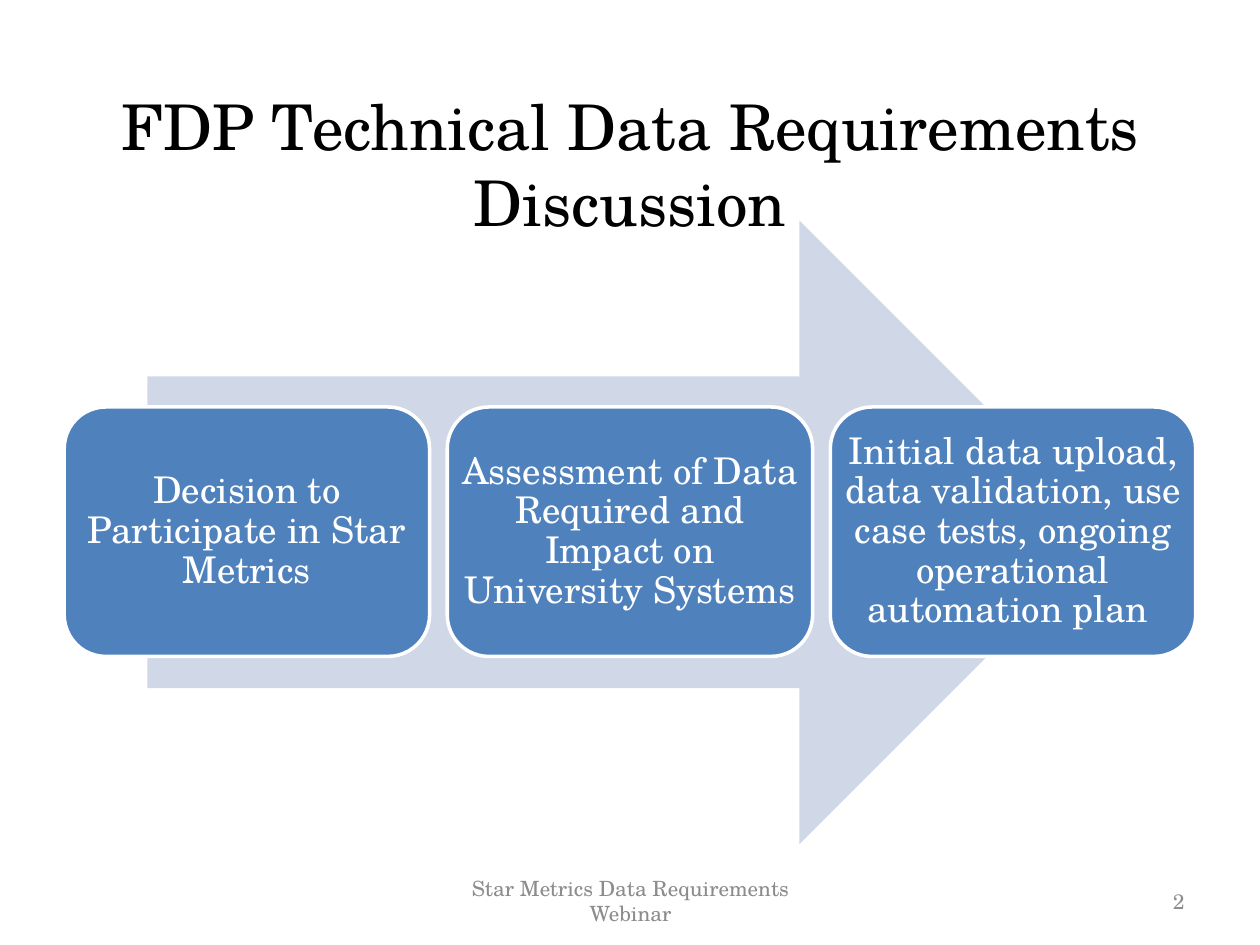
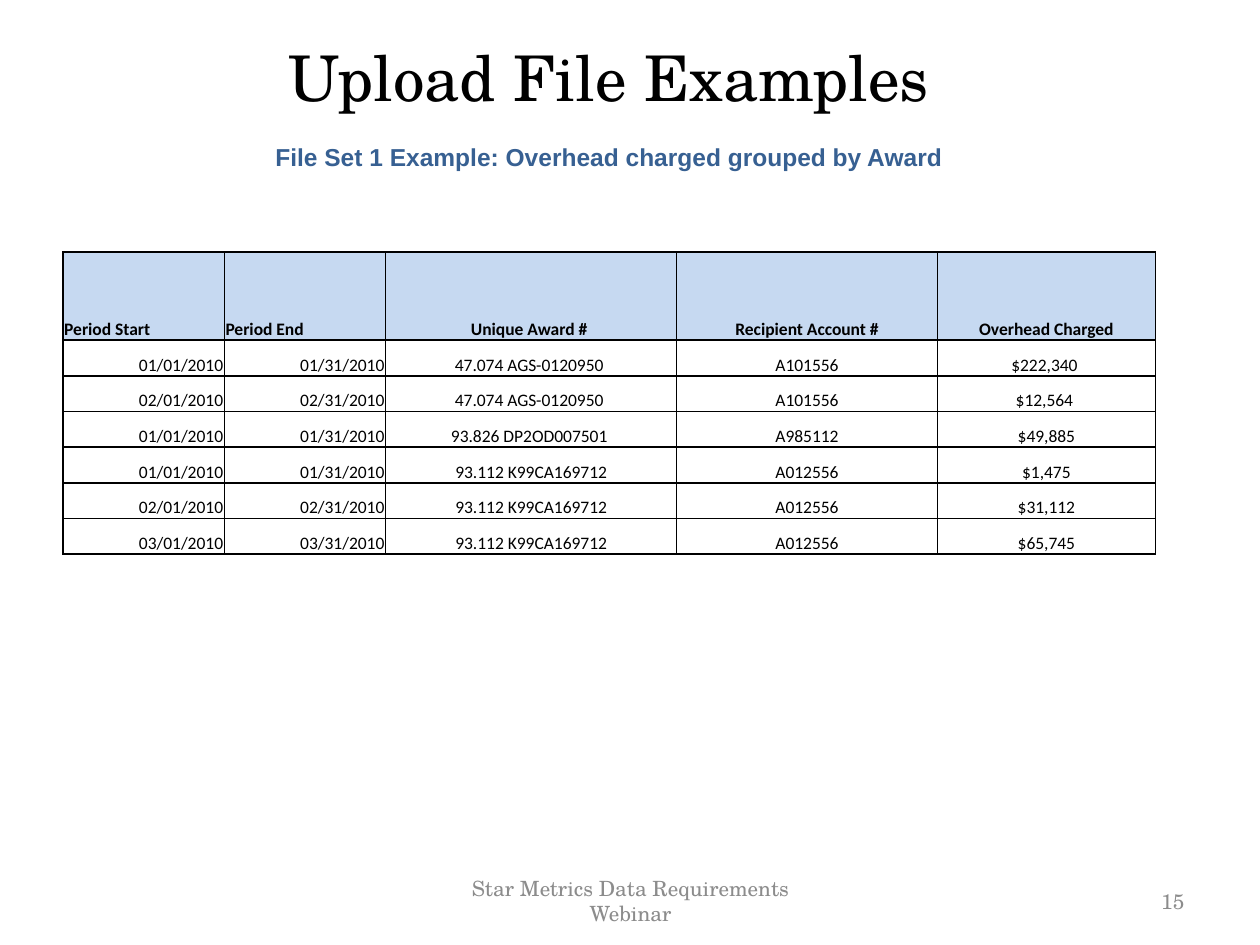
from dataclasses import dataclass

from lxml import etree
from pptx import Presentation
from pptx import util as u
from pptx.dml.color import RGBColor
from pptx.enum import shapes, text
from pptx.oxml.ns import qn


@dataclass(frozen=True)
class Theme:
    serif: str = "TeX Gyre Schola"
    sans: str = "Arial"
    table_font: str = "Calibri"
    ink: str = "000000"
    white: str = "FFFFFF"
    muted: str = "8C8C8C"
    arrow: str = "D0D8E8"
    step: str = "4F81BD"
    subtitle: str = "376092"
    header: str = "C6D9F1"
    title_size: float = 36
    step_size: float = 21
    subtitle_size: float = 14
    footer_size: float = 12
    table_size: float = 10


LEFT, CENTER, RIGHT = text.PP_ALIGN.LEFT, text.PP_ALIGN.CENTER, text.PP_ALIGN.RIGHT
MIDDLE, TOP = text.MSO_ANCHOR.MIDDLE, text.MSO_ANCHOR.TOP
FOOTER = "Star Metrics Data Requirements Webinar"

STEPS = [
    "Decision to Participate in Star Metrics",
    "Assessment of Data Required and Impact on University Systems",
    "Initial data upload, data validation, use case tests, ongoing "
    "operational automation plan ",
]

AWARD_COLUMNS = [1.28, 1.28, 2.31, 2.07, 1.73]
AWARD_ROWS = [
    ["Period Start", "Period End", "Unique Award # ", "Recipient Account #", "Overhead Charged"],
    ["01/01/2010", "01/31/2010", "47.074 AGS-0120950 ", "A101556", "$222,340 "],
    ["02/01/2010", "02/31/2010", "47.074 AGS-0120950 ", "A101556", "$12,564 "],
    ["01/01/2010", "01/31/2010", "93.826 DP2OD007501 ", "A985112", "$49,885"],
    ["01/01/2010", "01/31/2010", "93.112 K99CA169712", "A012556", "$1,475"],
    ["02/01/2010", "02/31/2010", "93.112 K99CA169712", "A012556", "$31,112"],
    ["03/01/2010", "03/31/2010", "93.112 K99CA169712", "A012556", "$65,745"],
]


def inches(*lengths):
    return [u.Inches(length) for length in lengths]


class SlideBuilder:
    def __init__(self, deck, theme):
        self.deck = deck
        self.theme = theme
        self.page = None

    def add_words(self, frame, words, size, color, font=None, align=CENTER, bold=False):
        """Put one formatted run into the first paragraph of a text frame."""
        para = frame.paragraphs[0]
        para.alignment = align
        span = para.add_run()
        span.text = words
        span.font.name = font or self.theme.serif
        span.font.size = u.Pt(size)
        span.font.bold = bold
        span.font.color.rgb = RGBColor.from_string(color)
        return para

    def start(self, title, title_area, number):
        """Add a slide with its title, footer and page number."""
        self.page = self.deck.slides.add_slide(self.deck.slide_layouts[5])
        box = self.page.shapes.title
        box.left, box.top, box.width, box.height = inches(*title_area)
        box.text_frame.auto_size = text.MSO_AUTO_SIZE.NONE
        box.text_frame.vertical_anchor = MIDDLE
        self.add_words(box.text_frame, title, self.theme.title_size, self.theme.ink)
        footer_style = (self.theme.footer_size, self.theme.muted)
        self.label((7.17, 6.95, 2.33, 0.4), str(number), *footer_style, align=RIGHT)
        self.label((3.42, 6.95, 3.17, 0.4), FOOTER, *footer_style)

    def label(self, area, words, size, color, anchor=MIDDLE, **style):
        frame = self.page.shapes.add_textbox(*inches(*area)).text_frame
        frame.word_wrap = True
        frame.vertical_anchor = anchor
        self.add_words(frame, words, size, color, **style)

    def shape(self, kind, area, fill):
        shape = self.page.shapes.add_shape(kind, *inches(*area))
        shape.shadow.inherit = False
        shape.fill.solid()
        shape.fill.fore_color.rgb = RGBColor.from_string(fill)
        shape.line.fill.background()
        return shape

    def step(self, area, words):
        box = self.shape(shapes.MSO_SHAPE.ROUNDED_RECTANGLE, area, self.theme.step)
        box.line.color.rgb = RGBColor.from_string(self.theme.white)
        box.line.width = u.Pt(2)
        frame = box.text_frame
        frame.word_wrap = True
        frame.vertical_anchor = MIDDLE
        # The rounded corners already inset the text
        frame.margin_left = frame.margin_right = frame.margin_top = frame.margin_bottom = 0
        para = self.add_words(frame, words, self.theme.step_size, self.theme.white)
        para.line_spacing = 0.9

    def borders(self, cell):
        """Draw a thin line on all four sides of a table cell."""
        properties = cell._tc.get_or_add_tcPr()
        for position, side in enumerate(("lnL", "lnR", "lnT", "lnB")):
            line = etree.Element(qn(f"a:{side}"), w=str(u.Pt(1)))
            fill = etree.SubElement(line, qn("a:solidFill"))
            etree.SubElement(fill, qn("a:srgbClr"), val=self.theme.ink)
            properties.insert(position, line)

    def cell(self, cell, words, align, is_header):
        cell.vertical_anchor = text.MSO_ANCHOR.BOTTOM
        cell.margin_left = cell.margin_right = cell.margin_top = u.Inches(0.01)
        cell.margin_bottom = 0
        if is_header:
            cell.fill.solid()
            cell.fill.fore_color.rgb = RGBColor.from_string(self.theme.header)
        else:
            cell.fill.background()
        self.borders(cell)
        self.add_words(cell.text_frame, words, self.theme.table_size, self.theme.ink,
                       font=self.theme.table_font, align=align, bold=is_header)

    def table(self, area, widths, rows, header_height):
        frame = self.page.shapes.add_table(len(rows), len(widths), *inches(*area))
        table = frame.table
        table.first_row = table.horz_banding = False
        for column, width in zip(table.columns, widths):
            column.width = u.Inches(width)
        body_height = (area[3] - header_height) / (len(rows) - 1)
        for r, values in enumerate(rows):
            table.rows[r].height = u.Inches(body_height if r else header_height)
            for c, words in enumerate(values):
                # The two date columns sit left in the header and right below it
                align = CENTER if c > 1 else RIGHT if r else LEFT
                self.cell(table.cell(r, c), words, align, is_header=r == 0)


def build_process(builder):
    builder.start("FDP Technical Data Requirements Discussion", (0.5, 0.67, 9, 1.25), 2)
    builder.shape(shapes.MSO_SHAPE.RIGHT_ARROW, (1.17, 1.75, 7.65, 4.95), builder.theme.arrow)
    width, gap = 2.9, 0.14
    for i, words in enumerate(STEPS):
        builder.step((0.51 + i * (width + gap), 3.23, width, 1.98), words)


def build_upload_example(builder):
    theme = builder.theme
    builder.start("Upload File Examples", (0.33, 0.33, 9, 0.55), 15)
    builder.label((1.75, 1.08, 6.17, 0.34),
                  "File Set 1 Example: Overhead charged grouped by Award",
                  theme.subtitle_size, theme.subtitle, anchor=TOP, font=theme.sans, bold=True)
    builder.table((0.5, 2, 8.67, 2.4), AWARD_COLUMNS, AWARD_ROWS, header_height=0.7)


def main():
    deck = Presentation()
    deck.slide_width, deck.slide_height = inches(10, 7.5)
    builder = SlideBuilder(deck, Theme())
    build_process(builder)
    build_upload_example(builder)
    deck.save("out.pptx")


if __name__ == "__main__":
    main()
